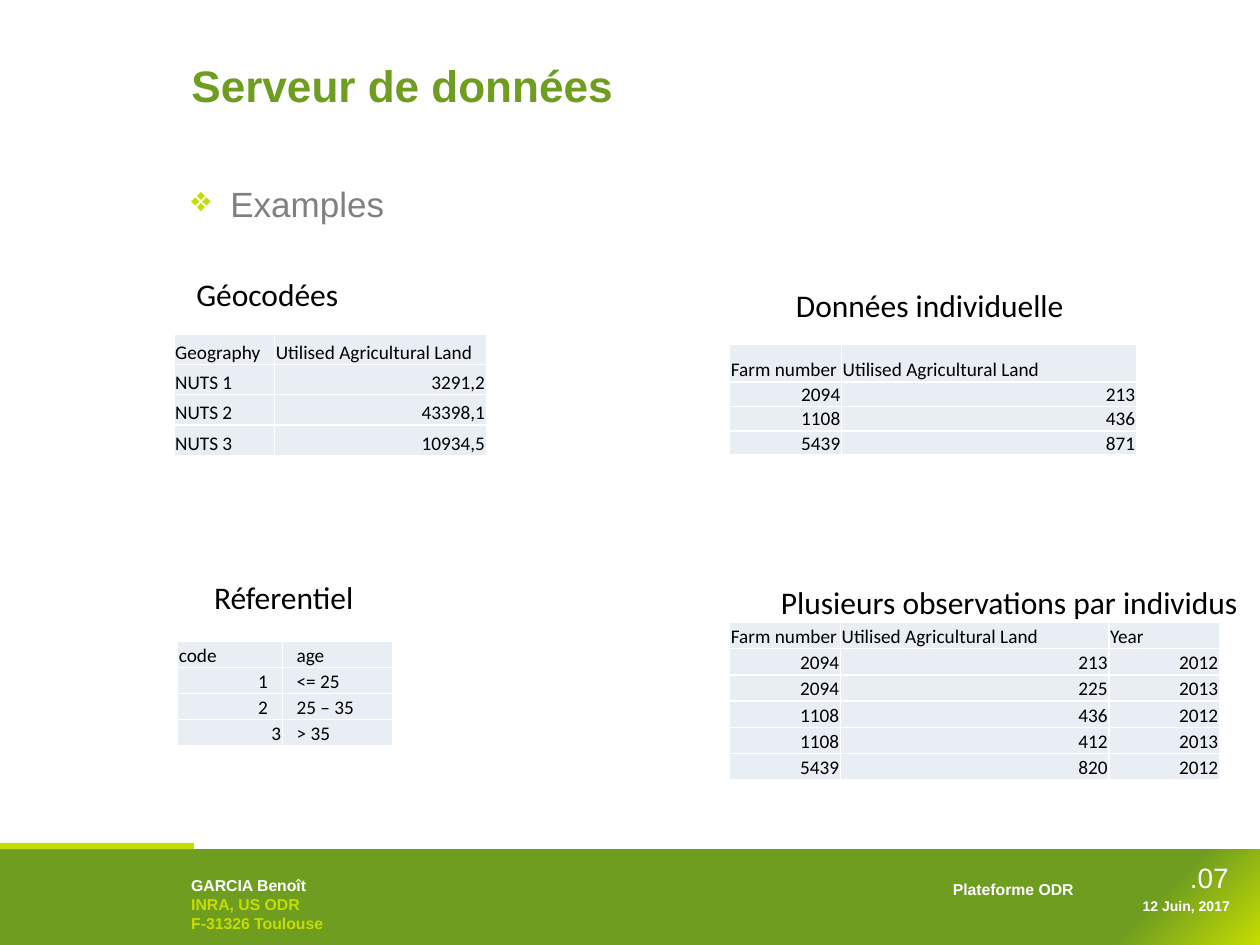
from dataclasses import dataclass

import pptx
import pptx.dml.color
import pptx.enum.shapes
import pptx.enum.text
import pptx.oxml
import pptx.oxml.ns
import pptx.util

Pt = pptx.util.Pt
Align = pptx.enum.text.PP_ALIGN
Anchor = pptx.enum.text.MSO_ANCHOR
AutoSize = pptx.enum.text.MSO_AUTO_SIZE
NAMESPACE = pptx.oxml.ns.nsdecls("a")


@dataclass(frozen=True)
class Theme:
    """Colours, fonts and type sizes of the slide."""
    green: str = "6F9D20"
    lime: str = "C5DD01"
    grey: str = "808080"
    black: str = "000000"
    white: str = "FFFFFF"
    cell: str = "E9EDF4"
    brand_font: str = "Arial"
    data_font: str = "Calibri"
    title: float = 25.2
    body: float = 20
    heading: float = 18
    page: float = 16
    table: float = 11
    footer: float = 9
    date: float = 8


THEME = Theme()
HANG = 22.3
CELL_INSET = 0.7
CELL_PAD = 8.2


def rgb(color):
    """Return a colour object for a hex string."""
    return pptx.dml.color.RGBColor.from_string(color)


def write_text(frame, text, *, size, color, font=THEME.brand_font, bold=False, align=Align.LEFT,
               left=0, indent=0, line_spacing=None, bullet=None, later_color=None):
    """Fill a text frame, one paragraph for each line of text."""
    for number, line in enumerate(text.split("\n")):
        paragraph = frame.add_paragraph() if number else frame.paragraphs[0]
        paragraph.alignment = align
        properties = paragraph._p.get_or_add_pPr()
        properties.set("marL", str(Pt(left)))
        properties.set("indent", str(Pt(indent)))
        if line_spacing:
            paragraph.line_spacing = line_spacing
        if bullet:
            properties.append(pptx.oxml.parse_xml(
                f'<a:buClr {NAMESPACE}><a:srgbClr val="{THEME.lime}"/></a:buClr>'))
            properties.append(pptx.oxml.parse_xml(f'<a:buChar {NAMESPACE} char="{bullet}"/>'))
        run = paragraph.add_run()
        run.text = line
        run.font.size = Pt(size)
        run.font.name = font
        run.font.bold = bold
        run.font.color.rgb = rgb(later_color if number and later_color else color)


def add_label(slide, box, text, *, anchor=Anchor.TOP, wrap=True, **text_format):
    """Add a text box at the given box."""
    frame = slide.shapes.add_textbox(*map(Pt, box)).text_frame
    frame.word_wrap = wrap
    frame.vertical_anchor = anchor
    frame.auto_size = AutoSize.NONE if wrap else AutoSize.SHAPE_TO_FIT_TEXT
    write_text(frame, text, **text_format)


def add_band(slide, box, color):
    """Add a plain rectangle without a line."""
    band = slide.shapes.add_shape(pptx.enum.shapes.MSO_SHAPE.RECTANGLE, *map(Pt, box))
    band.shadow.inherit = False
    band.fill.solid()
    band.fill.fore_color.rgb = rgb(color)
    band.line.fill.background()
    return band


def add_corner_glow(band):
    """Give a band a round gradient that starts in its lower right corner."""
    stops = ((0, THEME.lime), (11, THEME.green), (100, THEME.green))
    stop_xml = "".join(f'<a:gs pos="{position * 1000}"><a:srgbClr val="{color}"/></a:gs>'
                       for position, color in stops)
    solid = band._element.spPr.find(pptx.oxml.ns.qn("a:solidFill"))
    solid.getparent().replace(solid, pptx.oxml.parse_xml(
        f'<a:gradFill {NAMESPACE} rotWithShape="1"><a:gsLst>{stop_xml}</a:gsLst>'
        '<a:path path="circle"><a:fillToRect l="100000" t="100000"/></a:path></a:gradFill>'))


def add_title(slide, box, text):
    """Place and format the slide title."""
    title = slide.shapes.title
    title.left, title.top, title.width, title.height = map(Pt, box)
    title.fill.solid()
    title.fill.fore_color.rgb = rgb(THEME.white)
    title.text_frame.auto_size = AutoSize.NONE
    title.text_frame.vertical_anchor = Anchor.MIDDLE
    write_text(title.text_frame, text, size=THEME.title, color=THEME.green, bold=True,
               left=HANG, indent=-HANG, line_spacing=1.5)


def style_cell(cell, text, pad_left, pad_right):
    """Format one table cell, with numbers set to the right."""
    properties = cell._tc.get_or_add_tcPr()
    for side in "LRTB":
        properties.append(pptx.oxml.parse_xml(
            f'<a:ln{side} {NAMESPACE} w="{Pt(1)}"><a:solidFill>'
            f'<a:srgbClr val="{THEME.white}"/></a:solidFill></a:ln{side}>'))
    cell.fill.solid()
    cell.fill.fore_color.rgb = rgb(THEME.cell)
    cell.vertical_anchor = Anchor.BOTTOM
    cell.margin_left, cell.margin_right = Pt(pad_left), Pt(pad_right)
    cell.margin_top, cell.margin_bottom = Pt(CELL_INSET), 0
    is_number = text.replace(",", "").isdigit()
    write_text(cell.text_frame, text, size=THEME.table, color=THEME.black, font=THEME.data_font,
               align=Align.RIGHT if is_number else Align.LEFT)


def add_data_table(slide, box, widths, heights, records, padded_left=(), padded_right=()):
    """Add a table; padded cells are given as (row, column)."""
    table = slide.shapes.add_table(len(heights), len(widths), *map(Pt, box)).table
    table.first_row = table.horz_banding = False
    for column, width in zip(table.columns, widths):
        column.width = Pt(width)
    for row, height in zip(table.rows, heights):
        row.height = Pt(height)
    for r, record in enumerate(records):
        for c, text in enumerate(record):
            style_cell(table.cell(r, c), text,
                       CELL_PAD if (r, c) in padded_left else CELL_INSET,
                       CELL_PAD if (r, c) in padded_right else CELL_INSET)


def add_example(slide, heading_box, heading, table_box, widths, heights, records,
                hanging=False, **padding):
    """Add one example: a heading and its table."""
    add_data_table(slide, table_box, widths, heights, records, **padding)
    outline = dict(left=2 * HANG, indent=-HANG, line_spacing=1.5) if hanging else {}
    add_label(slide, heading_box, heading, wrap=False, size=THEME.heading, color=THEME.black,
              font=THEME.data_font, **outline)


def add_footer(slide, box):
    """Add the footer band with author, platform, page and date."""
    left, top, width, height = box
    add_corner_glow(add_band(slide, box, THEME.green))
    add_band(slide, (left, top - 3.6, 110.9, 3.6), THEME.lime)
    white_right = dict(color=THEME.white, align=Align.RIGHT)
    add_label(slide, (left + 560.2, top + 23.8, 149.8, 17.3), "12 Juin, 2017",
              anchor=Anchor.MIDDLE, size=THEME.date, bold=True, **white_right)
    add_label(slide, (left + 620.6, top + 6.5, 88.6, 19.4), ".07",
              anchor=Anchor.MIDDLE, size=THEME.page, **white_right)
    add_label(slide, (left + 275, top + 13.7, 345.6, 28.8), "Plateforme ODR",
              size=THEME.footer, bold=True, **white_right)
    add_label(slide, (left + 102.2, top + 11.5, 127.4, 40.3),
              "GARCIA Benoît\nINRA, US ODR\nF-31326 Toulouse", size=THEME.footer,
              color=THEME.white, later_color=THEME.lime, bold=True)


def main():
    """Build the slide and save it."""
    deck = pptx.Presentation()
    deck.slide_width, deck.slide_height = Pt(720), Pt(540)
    slide = deck.slides.add_slide(deck.slide_layouts[5])
    slide.background.fill.solid()
    slide.background.fill.fore_color.rgb = rgb(THEME.white)

    add_footer(slide, (0, 485.3, 720, 54.7))
    add_title(slide, (102.2, 20.2, 532.8, 41), "Serveur de données")
    add_label(slide, (102.2, 88.5, 586.8, 375.8), "Examples", size=THEME.body, color=THEME.grey,
              left=HANG, indent=-HANG, line_spacing=1.5, bullet="❖")

    land = "Utilised Agricultural Land"
    add_example(slide, (105.1, 153.4, 96.5, 28.8), "Géocodées",
                (99.4, 190.8, 178.5, 69.6), (57.5, 121), [17.4] * 4,
                [("Geography", land), ("NUTS 1", "3291,2"),
                 ("NUTS 2", "43398,1"), ("NUTS 3", "10934,5")])
    add_example(slide, (425.5, 149, 192.2, 40.3), "Données individuelle",
                (416.9, 196.6, 232.5, 63.6), (64, 168.5), [21.6] + [14] * 3,
                [("Farm number", land), ("2094", "213"), ("1108", "436"), ("5439", "871")],
                hanging=True)
    add_example(slide, (115.2, 326.9, 95, 28.8), "Réferentiel",
                (101.5, 366.5, 123, 59.6), (59.8, 63.2), [14.9] * 4,
                [("code", "age"), ("1", "<= 25"), ("2", "25 – 35"), ("3", "> 35")],
                padded_left=[(r, 1) for r in range(4)], padded_right=[(1, 0), (2, 0)])
    add_example(slide, (416.9, 319, 301, 40.3), "Plusieurs observations par individus",
                (416.9, 355.7, 280, 90), (63.4, 153.4, 63.2), [15] * 6,
                [("Farm number", land, "Year"), ("2094", "213", "2012"), ("2094", "225", "2013"),
                 ("1108", "436", "2012"), ("1108", "412", "2013"), ("5439", "820", "2012")],
                hanging=True)
    deck.save("out.pptx")


if __name__ == "__main__":
    main()
